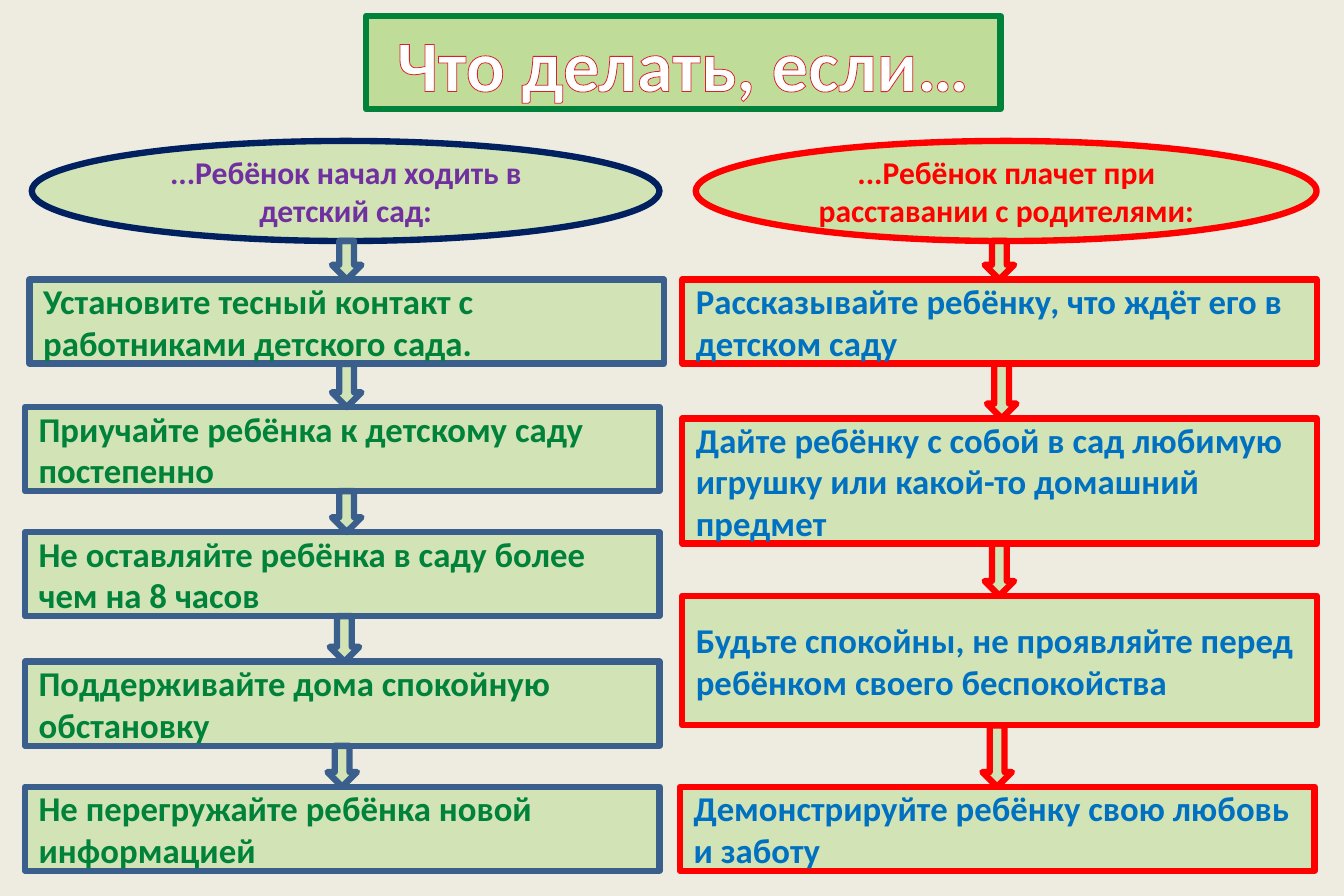
from lxml import etree
from pptx import Presentation
from pptx import util as u
from pptx.dml.color import RGBColor
from pptx.enum import shapes, text
from pptx.oxml import parse_xml
from pptx.oxml.ns import nsdecls, qn

COLORS = {
    "background": "EEECE1", "leaf": "92D050", "green": "00823B",
    "navy": "002060", "steel": "3A5F8C", "purple": "7030A0",
    "red": "FF0000", "blue": "0070C0", "white": "FFFFFF", "crimson": "DB1F2C",
}
SHAPE = shapes.MSO_SHAPE
ALIGN = text.PP_ALIGN
STEP_WIDTH = 2.79
ARROW_WIDTH = 0.13

# Steps: left, top, height, left of the arrow leading in, wording
STARTING = [
    (0.13, 1.23, 0.37, 1.46, "Установите тесный контакт с работниками детского сада."),
    (0.11, 1.79, 0.37, 1.46, "Приучайте ребёнка к детскому саду постепенно"),
    (0.11, 2.34, 0.37, 1.46, "Не оставляйте ребёнка в саду более чем на 8 часов"),
    (0.11, 2.91, 0.37, 1.45, "Поддерживайте дома спокойную обстановку"),
    (0.11, 3.46, 0.37, 1.44, "Не перегружайте ребёнка новой информацией"),
]
CRYING = [
    (3.00, 1.23, 0.37, 4.33, "Рассказывайте ребёнку, что ждёт его в детском саду"),
    (3.00, 1.84, 0.55, 4.34, "Дайте ребёнку с собой в сад любимую игрушку или какой-то домашний предмет"),
    (3.00, 2.62, 0.57, 4.33, "Будьте спокойны, не проявляйте перед ребёнком своего беспокойства"),
    (2.99, 3.46, 0.37, 4.32, "Демонстрируйте ребёнку свою любовь и заботу"),
]


def rgb(name):
    return RGBColor.from_string(COLORS[name])


def paint(shape, line, opacity):
    """Give a shape the translucent leaf fill and a 2 pt outline."""
    shape.fill.solid()
    shape.fill.fore_color.rgb = rgb("leaf")
    color = shape._element.spPr.find(qn("a:solidFill"))[0]
    etree.SubElement(color, qn("a:alpha"), val=str(opacity * 1000))
    shape.line.color.rgb = rgb(line)
    shape.line.width = u.Pt(2)


def write(shape, wording, size, color, align):
    frame = shape.text_frame
    frame.word_wrap = True
    frame.auto_size = text.MSO_AUTO_SIZE.NONE
    frame.vertical_anchor = text.MSO_ANCHOR.MIDDLE
    frame.margin_left = frame.margin_right = u.Inches(0.06)
    frame.margin_top = frame.margin_bottom = u.Inches(0.03)
    para = frame.paragraphs[0]
    para.text = wording
    para.alignment = align
    para.font.name = "Calibri"
    para.font.size = u.Pt(size)
    para.font.bold = True
    para.font.color.rgb = rgb(color)
    return para


def add_box(slide, kind, box, line, opacity=30):
    shape = slide.shapes.add_shape(kind, *map(u.Inches, box))
    shape.shadow.inherit = False
    paint(shape, line, opacity)
    return shape


def place_title(slide, box, wording):
    title = slide.shapes.title
    title.left, title.top, title.width, title.height = map(u.Inches, box)
    title._element.spPr.insert(1, parse_xml(
        f'<a:prstGeom {nsdecls("a")} prst="roundRect"><a:avLst>'
        '<a:gd name="adj" fmla="val 27500"/></a:avLst></a:prstGeom>'))
    paint(title, "green", 50)
    span = write(title, wording, 23, "white", ALIGN.CENTER).runs[0]
    span.font.color.rgb = rgb("white")
    span._r.get_or_add_rPr().insert(0, parse_xml(
        f'<a:ln {nsdecls("a")} w="{u.Pt(0.75)}"><a:solidFill>'
        f'<a:srgbClr val="{COLORS["crimson"]}"/></a:solidFill></a:ln>'))


def add_heading(slide, box, wording, line, color, opacity):
    oval = add_box(slide, SHAPE.OVAL, box, line, opacity)
    write(oval, wording, 10, color, ALIGN.CENTER)


def add_steps(slide, start, steps, line, color):
    """Stack the steps and join them with arrows, the first from start down."""
    for left, top, height, _, wording in steps:
        step = add_box(slide, SHAPE.RECTANGLE, (left, top, STEP_WIDTH, height), line)
        write(step, wording, 11, color, ALIGN.LEFT)
    bottom = start
    for _, top, height, arrow_left, _ in steps:
        add_box(slide, SHAPE.DOWN_ARROW,
                (arrow_left, bottom, ARROW_WIDTH, top - bottom), line)
        bottom = top + height


def main():
    deck = Presentation()
    deck.slide_width, deck.slide_height = u.Inches(5.91), u.Inches(3.94)
    slide = deck.slides.add_slide(deck.slide_layouts.get_by_name("Title Only"))
    slide.background.fill.solid()
    slide.background.fill.fore_color.rgb = rgb("background")

    place_title(slide, (1.61, 0.07, 2.79, 0.41), "Что делать, если…")
    add_heading(slide, (0.14, 0.62, 2.76, 0.44),
                "...Ребёнок начал ходить в детский сад:", "navy", "purple", 30)
    add_heading(slide, (3.06, 0.62, 2.73, 0.44),
                "...Ребёнок плачет при расставании с родителями:", "red", "red", 39)
    add_steps(slide, 1.06, STARTING, "steel", "green")
    add_steps(slide, 1.06, CRYING, "red", "blue")
    deck.save("out.pptx")


if __name__ == "__main__":
    main()
